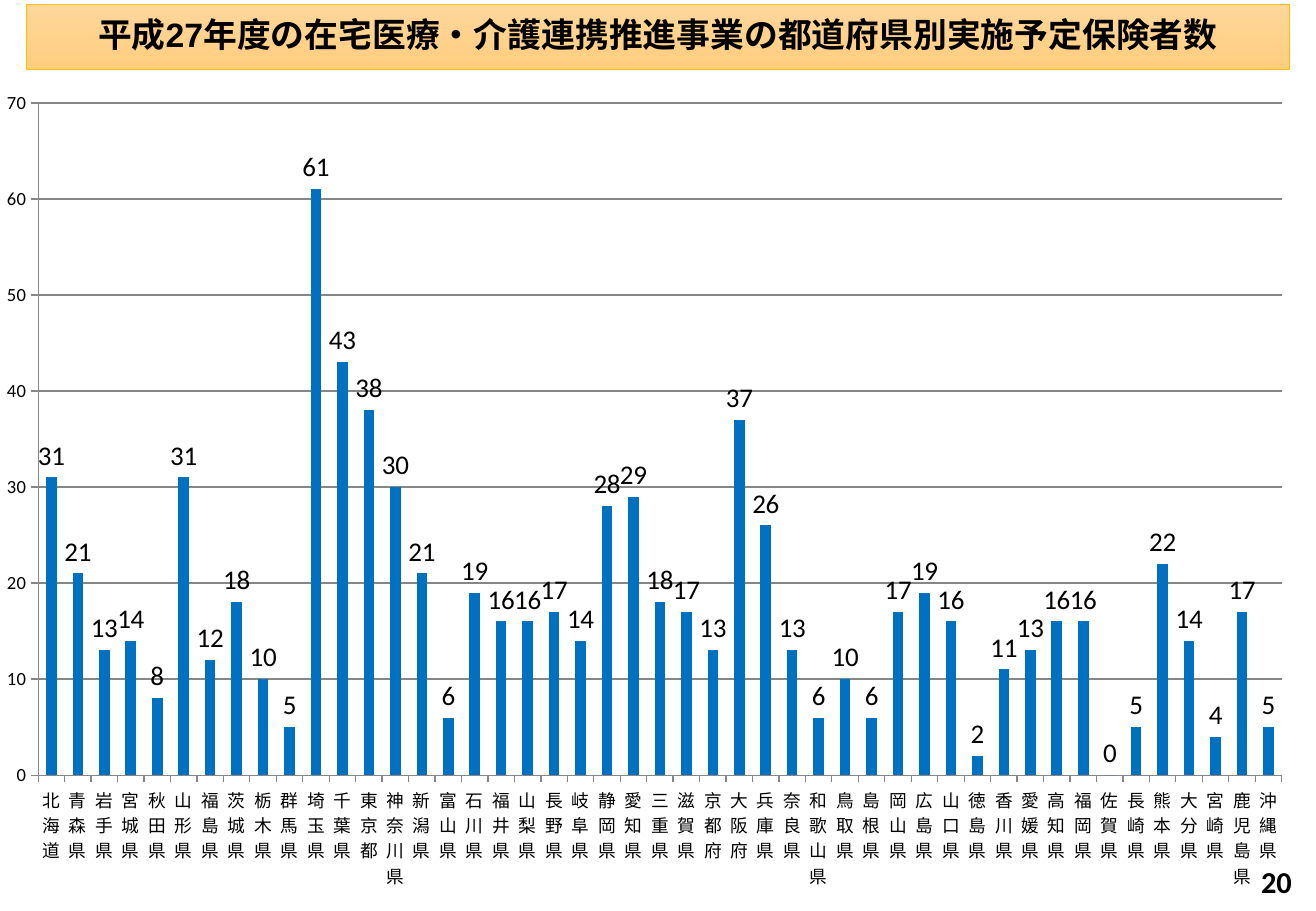
from lxml.etree import SubElement
from pptx import Presentation
from pptx.chart.data import CategoryChartData
from pptx.dml.color import RGBColor
from pptx.enum.chart import XL_CHART_TYPE as ChartType, XL_LABEL_POSITION as LabelPos
from pptx.enum.chart import XL_TICK_MARK as Tick
from pptx.enum.text import MSO_ANCHOR as Anchor, MSO_AUTO_SIZE as AutoSize, PP_ALIGN as Align
from pptx.oxml.ns import qn
from pptx.util import Inches, Pt

TITLE = "平成27年度の在宅医療・介護連携推進事業の都道府県別実施予定保険者数"
PAGE_NUMBER = "20"
INSURERS = {
    "北海道": 31, "青森県": 21, "岩手県": 13, "宮城県": 14, "秋田県": 8, "山形県": 31,
    "福島県": 12, "茨城県": 18, "栃木県": 10, "群馬県": 5, "埼玉県": 61, "千葉県": 43,
    "東京都": 38, "神奈川県": 30, "新潟県": 21, "富山県": 6, "石川県": 19, "福井県": 16,
    "山梨県": 16, "長野県": 17, "岐阜県": 14, "静岡県": 28, "愛知県": 29, "三重県": 18,
    "滋賀県": 17, "京都府": 13, "大阪府": 37, "兵庫県": 26, "奈良県": 13, "和歌山県": 6,
    "鳥取県": 10, "島根県": 6, "岡山県": 17, "広島県": 19, "山口県": 16, "徳島県": 2,
    "香川県": 11, "愛媛県": 13, "高知県": 16, "福岡県": 16, "佐賀県": 0, "長崎県": 5,
    "熊本県": 22, "大分県": 14, "宮崎県": 4, "鹿児島県": 17, "沖縄県": 5,
}
PLOT_AREA = {"x": 0.029, "y": 0.115, "w": 0.945, "h": 0.751}

BLACK = RGBColor(0x00, 0x00, 0x00)
BAR_BLUE = RGBColor(0x00, 0x70, 0xC0)
AXIS_GRAY = RGBColor(0x86, 0x86, 0x86)
BANNER_TOP = RGBColor(0xFF, 0xD7, 0x9B)
BANNER_BOTTOM = RGBColor(0xFF, 0xCD, 0x7E)
BANNER_EDGE = RGBColor(0xFF, 0xC0, 0x00)


def set_font(font, size, name="Calibri", bold=False):
    font.size, font.name, font.bold = Pt(size), name, bold
    font.color.rgb = BLACK


def add_text(slide, text, box, *, size, font="Calibri", align=Align.LEFT,
             anchor=Anchor.TOP, spacing=1.0, grow=False):
    label = slide.shapes.add_textbox(*map(Inches, box))
    frame = label.text_frame
    frame.word_wrap = True
    frame.auto_size = AutoSize.SHAPE_TO_FIT_TEXT if grow else AutoSize.NONE
    frame.vertical_anchor = anchor
    paragraph = frame.paragraphs[0]
    paragraph.alignment, paragraph.line_spacing = align, spacing
    run = paragraph.add_run()
    run.text = text
    set_font(run.font, size, font, bold=True)
    return label


def place_plot(chart):
    """Fix the inner plot area as fractions of the chart."""
    plot_area = chart.element.xpath("c:chart/c:plotArea")[0]
    for layout in plot_area.xpath("c:layout"):
        plot_area.remove(layout)
    layout = SubElement(plot_area, qn("c:layout"))
    plot_area.insert(0, layout)
    manual = SubElement(layout, qn("c:manualLayout"))
    settings = {"layoutTarget": "inner", "xMode": "edge", "yMode": "edge", **PLOT_AREA}
    for tag, value in settings.items():
        SubElement(manual, qn(f"c:{tag}")).set("val", str(value))


def add_insurer_chart(slide):
    data = CategoryChartData()
    data.categories = list(INSURERS)
    data.add_series("実施予定保険者数", list(INSURERS.values()))
    chart = slide.shapes.add_chart(
        ChartType.COLUMN_CLUSTERED, *map(Inches, (0, 0, 10.83, 7.37)), data).chart
    chart.has_legend = chart.has_title = False
    set_font(chart.font, 18)
    place_plot(chart)

    bars = chart.plots[0]
    bars.gap_width, bars.vary_by_categories = 150, False
    fill = bars.series[0].format.fill
    fill.solid()
    fill.fore_color.rgb = BAR_BLUE
    bars.has_data_labels = True
    bars.data_labels.show_value = True
    bars.data_labels.position = LabelPos.OUTSIDE_END
    set_font(bars.data_labels.font, 16)

    prefectures, counts = chart.category_axis, chart.value_axis
    for axis, size in ((prefectures, 10.5), (counts, 11)):
        set_font(axis.tick_labels.font, size)
        axis.major_tick_mark, axis.minor_tick_mark = Tick.OUTSIDE, Tick.NONE
        axis.format.line.color.rgb = AXIS_GRAY
        axis.format.line.width = Pt(0.75)
    counts.minimum_scale, counts.maximum_scale, counts.major_unit = 0, 70, 10
    counts.has_major_gridlines = True
    counts.major_gridlines.format.line.color.rgb = AXIS_GRAY
    counts.major_gridlines.format.line.width = Pt(0.75)
    label_body = chart.element.xpath("//c:catAx/c:txPr/a:bodyPr")[0]
    label_body.set("rot", "0")
    label_body.set("vert", "eaVert")


def add_banner(slide):
    banner = add_text(slide, TITLE, (0.22, 0.04, 10.39, 0.53), size=20, font="Arial",
                      align=Align.CENTER, anchor=Anchor.MIDDLE, spacing=0.9)
    banner.fill.gradient()
    banner.fill.gradient_angle = 270
    for stop, color in zip(banner.fill.gradient_stops, (BANNER_TOP, BANNER_BOTTOM)):
        stop.color.rgb = color
    banner.line.color.rgb = BANNER_EDGE
    banner.line.width = Pt(0.5)


def main():
    deck = Presentation()
    deck.slide_width, deck.slide_height = Inches(10.83), Inches(7.5)
    slide = deck.slides.add_slide(deck.slide_layouts[6])
    add_insurer_chart(slide)
    add_banner(slide)
    add_text(slide, PAGE_NUMBER, (9.62, 7.06, 1.11, 0.4), size=18,
             align=Align.RIGHT, grow=True)
    deck.save("out.pptx")


if __name__ == "__main__":
    main()
